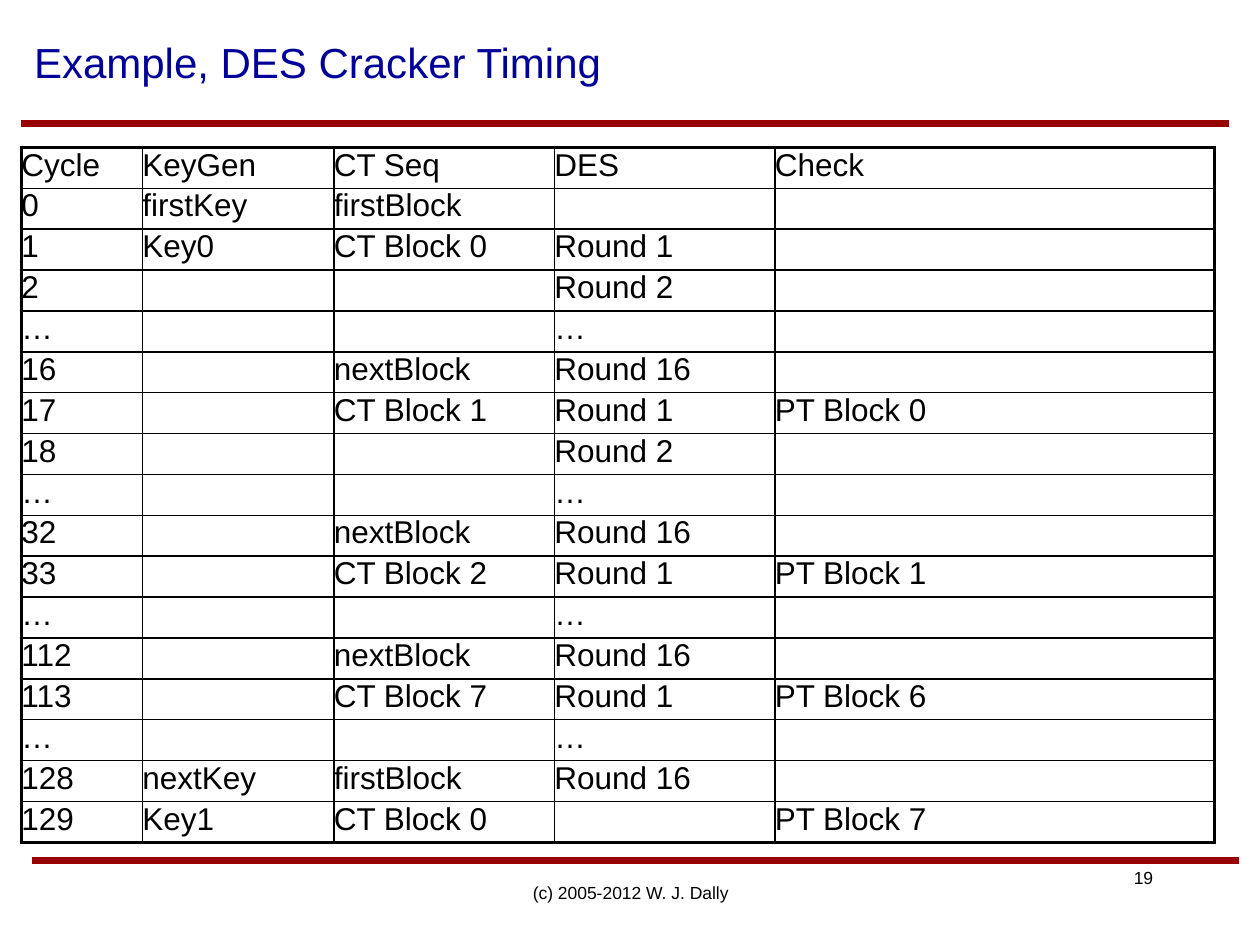
from lxml.etree import SubElement
from pptx import Presentation
from pptx.dml.color import RGBColor
from pptx.enum.shapes import MSO_CONNECTOR
from pptx.enum.text import MSO_ANCHOR, PP_ALIGN
from pptx.oxml.ns import qn
from pptx.util import Inches, Pt

TITLE = "Example, DES Cracker Timing"
FOOTER = "(c) 2005-2012 W. J. Dally"
PAGE = "19"
TIMING = [
    ("Cycle", "KeyGen", "CT Seq", "DES", "Check"),
    ("0", "firstKey", "firstBlock", "", ""),
    ("1", "Key0", "CT Block 0", "Round 1", ""),
    ("2", "", "", "Round 2", ""),
    ("…", "", "", "…", ""),
    ("16", "", "nextBlock", "Round 16", ""),
    ("17", "", "CT Block 1", "Round 1", "PT Block 0"),
    ("18", "", "", "Round 2", ""),
    ("…", "", "", "…", ""),
    ("32", "", "nextBlock", "Round 16", ""),
    ("33", "", "CT Block 2", "Round 1", "PT Block 1"),
    ("…", "", "", "…", ""),
    ("112", "", "nextBlock", "Round 16", ""),
    ("113", "", "CT Block 7", "Round 1", "PT Block 6"),
    ("…", "", "", "…", ""),
    ("128", "nextKey", "firstBlock", "Round 16", ""),
    ("129", "Key1", "CT Block 0", "", "PT Block 7"),
]
COL_WIDTHS = [0.96, 1.52, 1.75, 1.75, 3.49]
TABLE_LEFT, TABLE_TOP, TABLE_HEIGHT = 0.17, 1.17, 5.52
RULES = [(0.17, 0.98), (0.25, 6.83)]
RULE_LENGTH = 9.58
OUTER, INNER = 2.25, 1
NO_MARGINS = dict.fromkeys(
    ("margin_left", "margin_right", "margin_top", "margin_bottom"), 0)


def color(hex_value):
    return RGBColor.from_string(hex_value)


def set_attrs(obj, values):
    for name, value in values.items():
        setattr(obj, name, value)


def write(tf, text, size, hex_value="000000", align=PP_ALIGN.LEFT):
    p = tf.paragraphs[0]
    p.alignment = align
    r = p.add_run()
    r.text = text
    set_attrs(r.font, {"name": "Arial", "size": Pt(size)})
    r.font.color.rgb = color(hex_value)


def add_rule(slide, left, top):
    line = slide.shapes.add_connector(
        MSO_CONNECTOR.STRAIGHT, Inches(left), Inches(top),
        Inches(left + RULE_LENGTH), Inches(top))
    line.line.color.rgb = color("990000")
    line.line.width = Pt(4)
    SubElement(line._element.spPr, qn("a:effectLst"))


def add_label(slide, box, text, align, **frame):
    tf = slide.shapes.add_textbox(*map(Inches, box)).text_frame
    set_attrs(tf, frame)
    write(tf, text, 10, align=align)


def set_borders(cell, widths):
    """Draw black borders; widths maps L, R, T, B (in that order) to points."""
    tcPr = cell._tc.get_or_add_tcPr()
    for side, width in widths.items():
        ln = SubElement(tcPr, qn(f"a:ln{side}"), w=str(Pt(width)))
        fill = SubElement(ln, qn("a:solidFill"))
        SubElement(fill, qn("a:srgbClr"), val="000000")


def add_timing_table(slide):
    n_rows, n_cols = len(TIMING), len(COL_WIDTHS)
    table = slide.shapes.add_table(
        n_rows, n_cols, Inches(TABLE_LEFT), Inches(TABLE_TOP),
        Inches(sum(COL_WIDTHS)), Inches(TABLE_HEIGHT)).table
    set_attrs(table, {"first_row": False, "horz_banding": False})
    for column, width in zip(table.columns, COL_WIDTHS):
        column.width = Inches(width)
    for i, row in enumerate(TIMING):
        table.rows[i].height = Inches(TABLE_HEIGHT / n_rows)
        for j, text in enumerate(row):
            cell = table.cell(i, j)
            set_attrs(cell, NO_MARGINS)
            at_edge = {"L": j == 0, "R": j == n_cols - 1,
                       "T": i == 0, "B": i == n_rows - 1}
            set_borders(cell, {side: OUTER if edge else INNER
                               for side, edge in at_edge.items()})
            cell.fill.background()
            if text:
                write(cell.text_frame, text, 18)


def main():
    prs = Presentation()
    set_attrs(prs, {"slide_width": Inches(10), "slide_height": Inches(7.5)})
    slide = prs.slides.add_slide(prs.slide_layouts[5])

    for left, top in RULES:
        add_rule(slide, left, top)
    add_label(slide, (7.5, 6.83, 1.75, 0.27), PAGE, PP_ALIGN.RIGHT,
              word_wrap=True)
    add_label(slide, (3.42, 6.83, 3.17, 0.5), FOOTER, PP_ALIGN.CENTER,
              word_wrap=False, vertical_anchor=MSO_ANCHOR.MIDDLE)

    title = slide.shapes.title
    set_attrs(title, {"left": Inches(0.17), "top": Inches(0),
                      "width": Inches(9.83), "height": Inches(0.98)})
    title.text_frame.vertical_anchor = MSO_ANCHOR.MIDDLE
    write(title.text_frame, TITLE, 24, "000099")

    add_timing_table(slide)
    prs.save("out.pptx")


if __name__ == "__main__":
    main()
